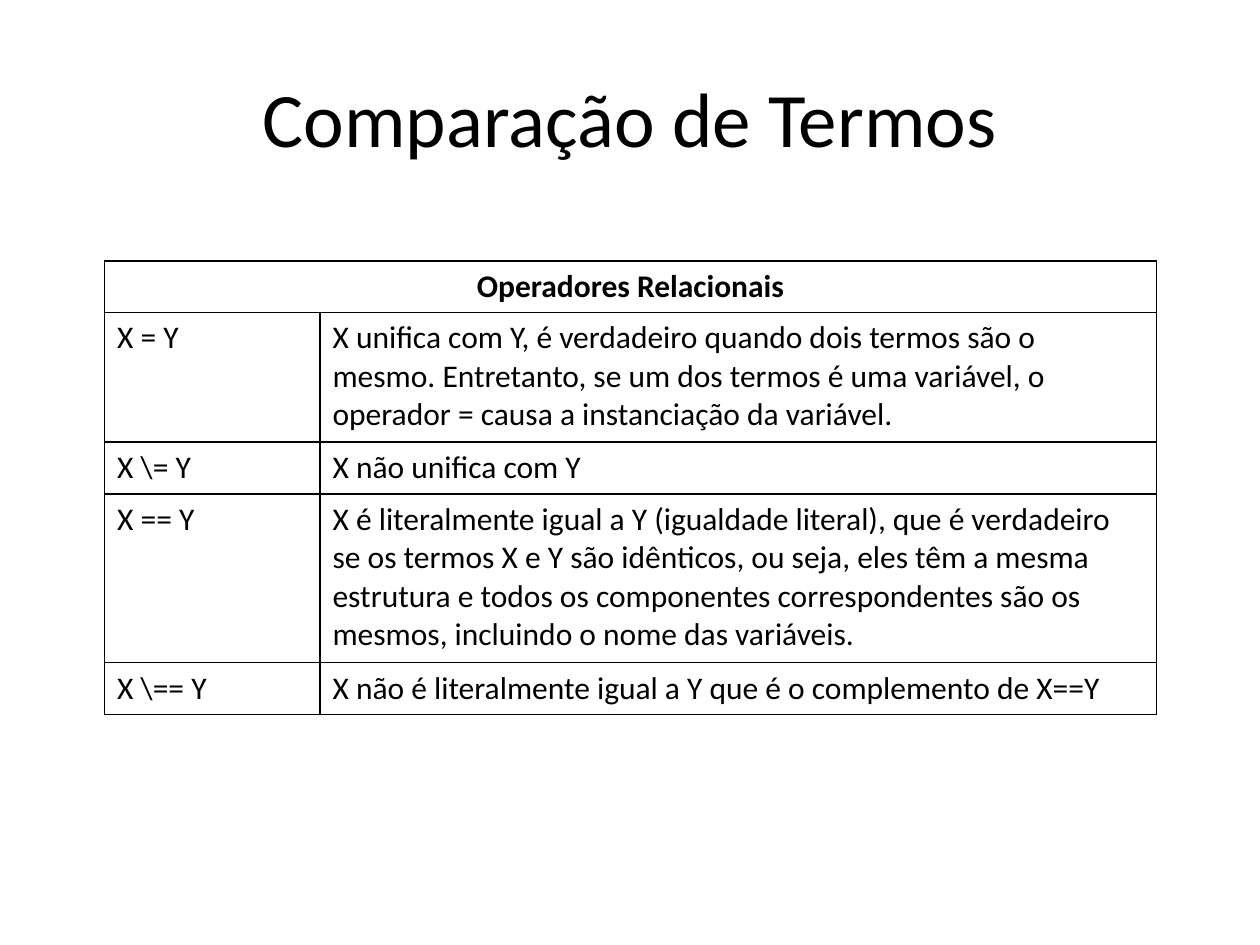
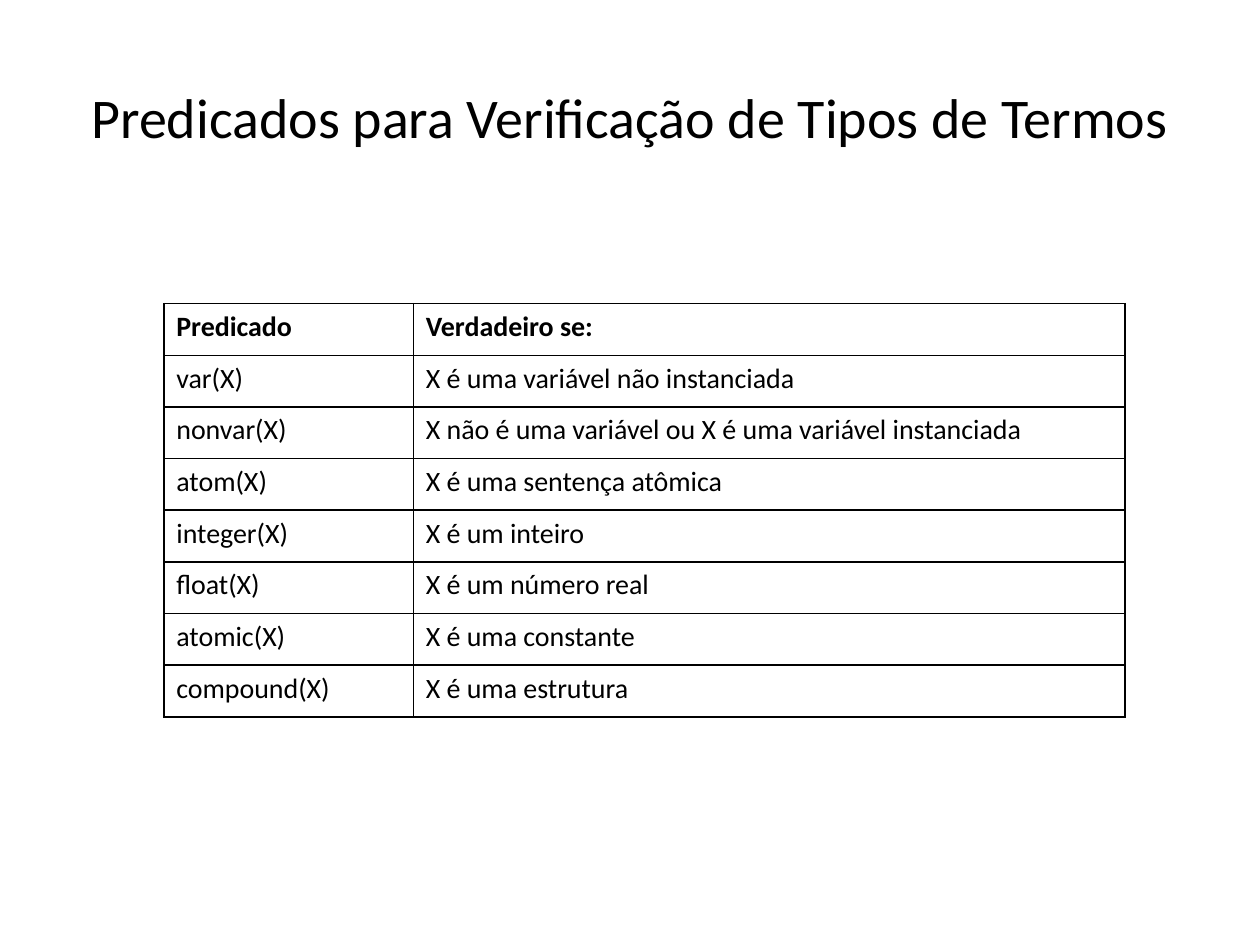
from lxml import etree
from pptx import Presentation
from pptx.dml.color import RGBColor
from pptx.enum.text import MSO_ANCHOR, PP_ALIGN
from pptx.oxml.ns import qn
from pptx.util import Inches, Pt

CENTER, LEFT = PP_ALIGN.CENTER, PP_ALIGN.LEFT
MIDDLE = MSO_ANCHOR.MIDDLE
TITLE_ONLY = 5

FONT, INK, PAPER = "Calibri", "000000", "FFFFFF"
BORDER_WIDTH = 1
LINE_HEIGHT, CELL_PADDING = 0.31, 0.1

SLIDES = [
    {
        "title": "Comparação de Termos",
        "title_size": 44,
        "text_size": 18,
        "origin": (0.83, 2.07),
        "columns": (1.71, 6.64),
        "fill": PAPER,
        "rows": [
            ("Operadores Relacionais",),
            ("X = Y", "X unifica com Y, é verdadeiro quando dois termos são o mesmo. "
                      "Entretanto, se um dos termos é uma variável, o operador = causa "
                      "a instanciação da variável."),
            (r"X \= Y", "X não unifica com Y"),
            ("X == Y", "X é literalmente igual a Y (igualdade literal), que é verdadeiro "
                       "se os termos X e Y são idênticos, ou seja, eles têm a mesma "
                       "estrutura e todos os componentes correspondentes são os mesmos, "
                       "incluindo o nome das variáveis."),
            (r"X \== Y", "X não é literalmente igual a Y que é o complemento de X==Y"),
        ],
        "line_counts": (1, 3, 1, 4, 1),
    },
    {
        "title": "Predicados para Verificação de Tipos de Termos",
        "title_size": 32,
        "text_size": 16,
        "origin": (1.3, 2.41),
        "columns": (1.98, 5.65),
        "fill": None,
        "rows": [
            ("Predicado", "Verdadeiro se:"),
            ("var(X)", "X é uma variável não instanciada"),
            ("nonvar(X)", "X não é uma variável ou X é uma variável instanciada"),
            ("atom(X)", "X é uma sentença atômica"),
            ("integer(X)", "X é um inteiro"),
            ("float(X)", "X é um número real"),
            ("atomic(X)", "X é uma constante"),
            ("compound(X)", "X é uma estrutura"),
        ],
        "line_counts": (1,) * 8,
    },
]


def color(hex_string):
    return RGBColor.from_string(hex_string)


def write(text_frame, text, align, size, bold=False):
    text_frame.text = text
    text_frame.word_wrap = True
    paragraph = text_frame.paragraphs[0]
    paragraph.alignment = align
    font_format = {"name": FONT, "size": Pt(size), "bold": bold}
    for attribute, value in font_format.items():
        setattr(paragraph.font, attribute, value)
    paragraph.font.color.rgb = color(INK)


def add_borders(cell):
    properties = cell._tc.get_or_add_tcPr()
    for position, side in enumerate(("lnL", "lnR", "lnT", "lnB")):
        line = etree.Element(qn(f"a:{side}"), w=str(Pt(BORDER_WIDTH)))
        fill = etree.SubElement(line, qn("a:solidFill"))
        etree.SubElement(fill, qn("a:srgbClr"), val=INK)
        properties.insert(position, line)


def add_title(slide, content):
    title = slide.shapes.title
    title.left, title.top, title.width, title.height = map(Inches, (0.5, 0.3, 9, 1.25))
    title.text_frame.vertical_anchor = MIDDLE
    write(title.text_frame, content["title"], CENTER, content["title_size"])


def add_bordered_table(slide, content):
    rows, columns = content["rows"], content["columns"]
    heights = [CELL_PADDING + LINE_HEIGHT * count for count in content["line_counts"]]
    left, top = content["origin"]
    table = slide.shapes.add_table(
        len(rows), len(columns), Inches(left), Inches(top),
        Inches(sum(columns)), Inches(sum(heights))).table
    table.horz_banding = False
    for column, width in zip(table.columns, columns):
        column.width = Inches(width)

    for row_index, (texts, height) in enumerate(zip(rows, heights)):
        table.rows[row_index].height = Inches(height)
        spans_table = len(texts) < len(columns)
        if spans_table:
            table.cell(row_index, 0).merge(table.cell(row_index, len(columns) - 1))
        for column_index, text in enumerate(texts):
            write(table.cell(row_index, column_index).text_frame, text,
                  CENTER if spans_table else LEFT, content["text_size"],
                  bold=row_index == 0)

    for cell in table.iter_cells():
        if content["fill"]:
            cell.fill.solid()
            cell.fill.fore_color.rgb = color(content["fill"])
        else:
            cell.fill.background()
        add_borders(cell)


def main():
    presentation = Presentation()
    presentation.slide_width, presentation.slide_height = Inches(10), Inches(7.5)
    for content in SLIDES:
        slide = presentation.slides.add_slide(presentation.slide_layouts[TITLE_ONLY])
        add_title(slide, content)
        add_bordered_table(slide, content)
    presentation.save("out.pptx")


if __name__ == "__main__":
    main()
